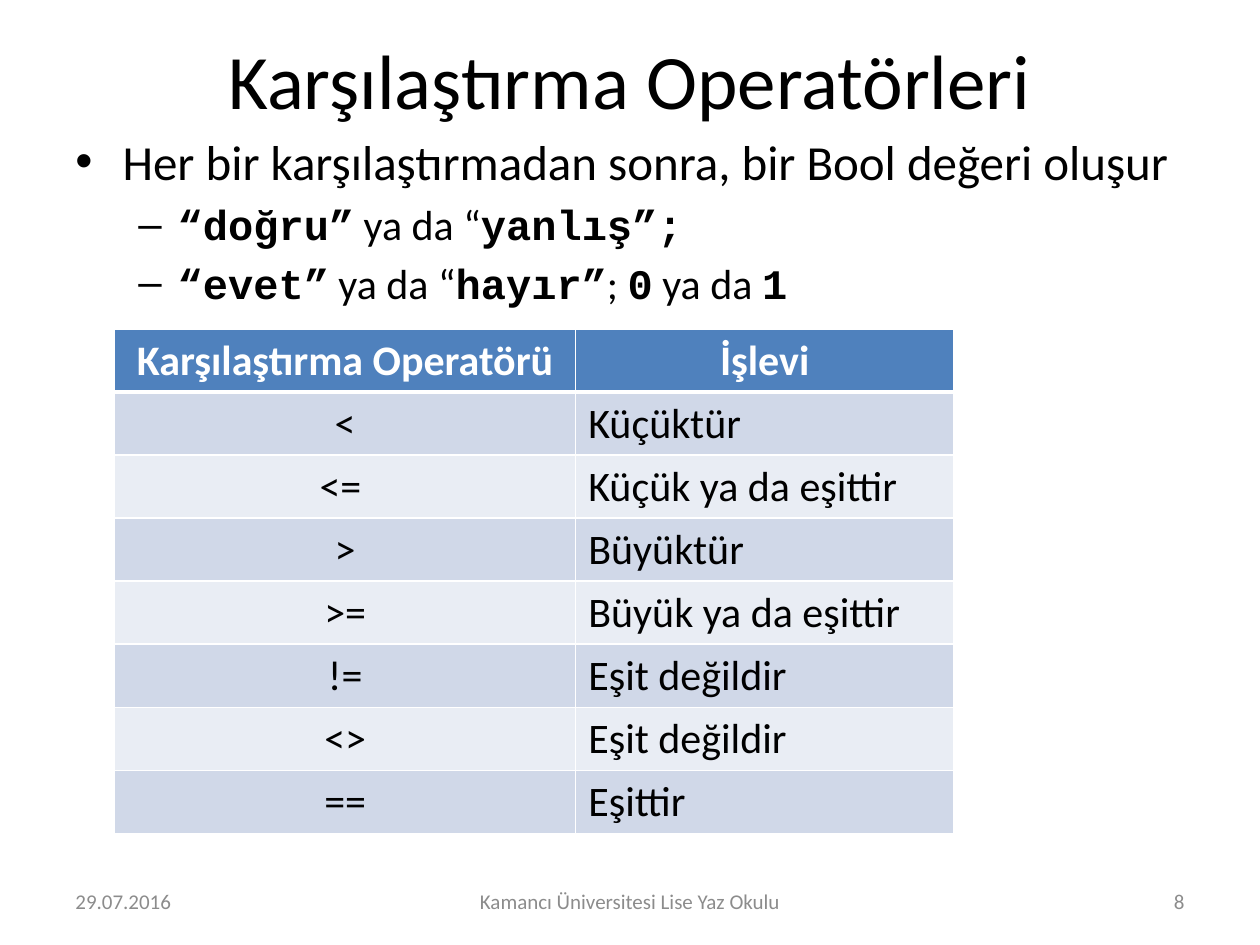
from lxml import etree
from pptx import Presentation
from pptx import util as u
from pptx.dml.color import RGBColor
from pptx.enum import text as t
from pptx.oxml import ns

BLACK = RGBColor(0, 0, 0)
WHITE = RGBColor(255, 255, 255)
GRAY = RGBColor(0x8C, 0x8C, 0x8C)
BLUE = RGBColor(0x4F, 0x81, 0xBD)
BANDS = RGBColor(0xE9, 0xED, 0xF4), RGBColor(0xD0, 0xD8, 0xE8)
SANS, MONO = "Calibri", "Courier New"
LEFT, MID, RIGHT = t.PP_ALIGN.LEFT, t.PP_ALIGN.CENTER, t.PP_ALIGN.RIGHT

POINTS = [
    ["“doğru”", " ya da “", "yanlış”;"],
    ["“evet”", " ya da “", "hayır”", "; ", "0", " ya da ", "1"],
]
ROWS = [
    ("Karşılaştırma Operatörü", "İşlevi"),
    ("<", "Küçüktür"),
    ("<= ", "Küçük ya da eşittir"),
    (">", "Büyüktür"),
    (">=", "Büyük ya da eşittir"),
    ("!=", "Eşit değildir"),
    ("<>", "Eşit değildir"),
    ("==", "Eşittir"),
]


def style(run, size, color=BLACK, bold=False, face=SANS):
    font = run.font
    font.size, font.bold, font.name = u.Pt(size), bold, face
    font.color.rgb = color


def add_box(slide, left, top, width, height, anchor=t.MSO_ANCHOR.MIDDLE):
    box = slide.shapes.add_textbox(*map(u.Pt, (left, top, width, height)))
    frame = box.text_frame
    frame.word_wrap = True
    frame.vertical_anchor = anchor
    return frame


def add_label(slide, words, place, size, color, align):
    para = add_box(slide, *place).paragraphs[0]
    para.text, para.alignment = words, align
    style(para.runs[0], size, color)


def set_bullet(para, mark, margin, hang, size, level):
    para.level = level
    para.space_before = u.Pt(size * 0.2)
    props = para._p.get_or_add_pPr()
    props.set("marL", str(u.Pt(margin)))
    props.set("indent", str(u.Pt(-hang)))
    etree.SubElement(props, ns.qn("a:buFont")).set("typeface", "Arial")
    etree.SubElement(props, ns.qn("a:buChar")).set("char", mark)


def add_points(slide):
    frame = add_box(slide, 36, 71.5, 648, 135, t.MSO_ANCHOR.TOP)
    head = frame.paragraphs[0]
    head.text = "Her bir karşılaştırmadan sonra, bir Bool değeri oluşur"
    style(head.runs[0], 28)
    set_bullet(head, "•", 27, 27, 28, 0)
    for parts in POINTS:
        para = frame.add_paragraph()
        set_bullet(para, "–", 58.5, 22.5, 24, 1)
        for i, words in enumerate(parts):
            run = para.add_run()
            run.text = words
            code = i % 2 == 0
            style(run, 24, bold=code, face=MONO if code else SANS)


def set_edges(cell, base):
    props = cell._tc.get_or_add_tcPr()
    for side, width in zip("LRTB", (1, 1, 1, base)):
        line = etree.SubElement(props, ns.qn("a:ln" + side), w=str(u.Pt(width)))
        fill = etree.SubElement(line, ns.qn("a:solidFill"))
        etree.SubElement(fill, ns.qn("a:srgbClr")).set("val", str(WHITE))


def add_grid(slide):
    place = map(u.Pt, (65.5, 188, 479.5, 288))
    table = slide.shapes.add_table(len(ROWS), 2, *place).table
    for col, width in zip(table.columns, (263.5, 216)):
        col.width = u.Pt(width)
    for r, row in enumerate(ROWS):
        top = r == 0
        for c, words in enumerate(row):
            cell = table.cell(r, c)
            set_edges(cell, 3 if top else 1)
            cell.fill.solid()
            cell.fill.fore_color.rgb = BLUE if top else BANDS[r % 2]
            para = cell.text_frame.paragraphs[0]
            para.text = words
            para.alignment = MID if top or c == 0 else LEFT
            style(para.runs[0], 24, WHITE if top else BLACK, top)


def main():
    """Build the slide on comparison operators."""
    deck = Presentation()
    deck.slide_width, deck.slide_height = u.Pt(720), u.Pt(540)
    slide = deck.slides.add_slide(deck.slide_layouts[6])
    title = "Karşılaştırma Operatörleri"
    add_label(slide, title, (36, 0, 648, 90), 44, BLACK, MID)
    add_points(slide)
    add_grid(slide)
    for words, left, width, align in (
        ("29.07.2016", 36, 168, LEFT),
        ("8", 516, 168, RIGHT),
        ("Kamancı Üniversitesi Lise Yaz Okulu", 246, 228, MID),
    ):
        add_label(slide, words, (left, 500.5, width, 28.75), 12, GRAY, align)
    deck.save("out.pptx")


if __name__ == "__main__":
    main()
